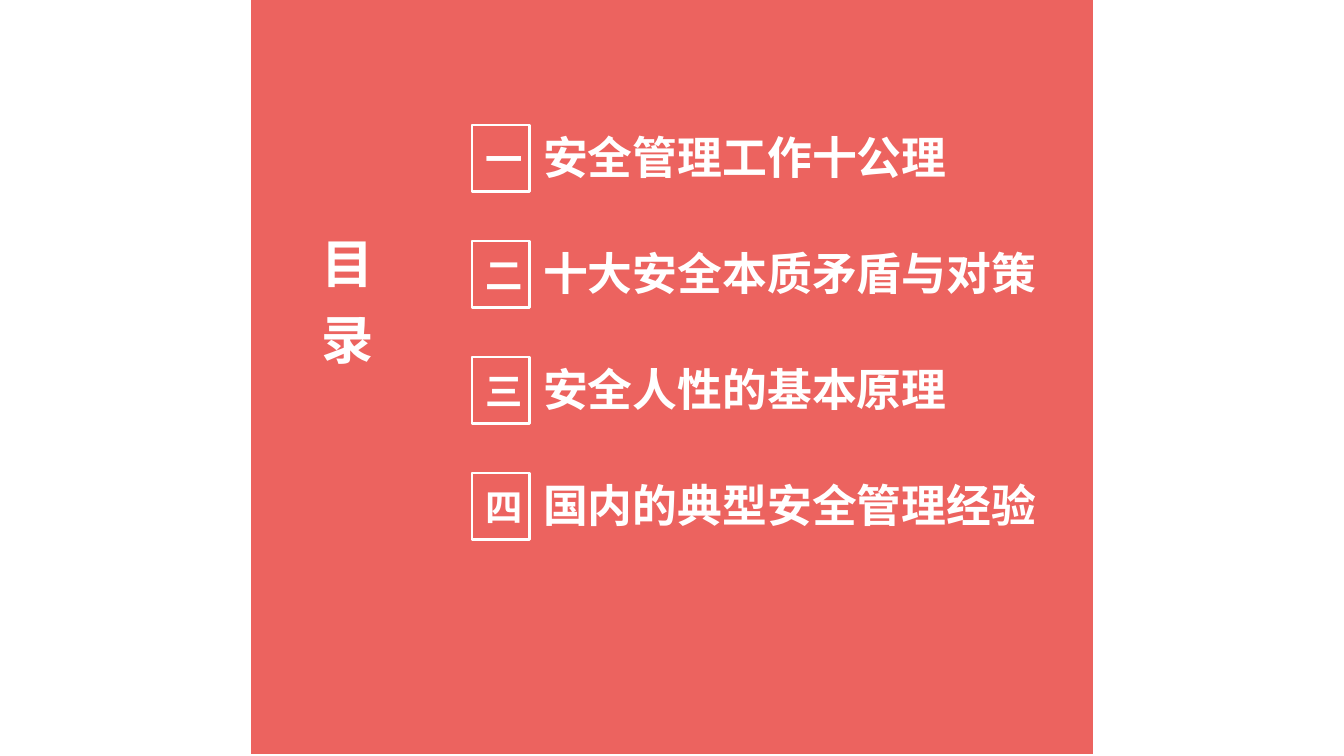
"""Build the contents slide: a vertical title and four numbered chapters."""
from lxml.etree import SubElement
from pptx import Presentation
from pptx.dml.color import RGBColor
from pptx.enum.shapes import MSO_SHAPE
from pptx.enum.text import MSO_ANCHOR, MSO_AUTO_SIZE, PP_ALIGN
from pptx.oxml.ns import qn
from pptx.util import Pt

TITLE = "目录"
CHAPTERS = [
    ("一", "安全管理工作十公理"),
    ("二", "十大安全本质矛盾与对策"),
    ("三", "安全人性的基本原理"),
    ("四", "国内的典型安全管理经验"),
]
FONT = "Noto Sans CJK SC"
RED = RGBColor(0xE6, 0x2D, 0x28)
WHITE = RGBColor(0xFF, 0xFF, 0xFF)
SCALE = 914400 / 134.4
TOP, PITCH = 125, 116
BOX_X, BOX_W, BOX_H = 472, 58, 67
LABEL_W = 540


def px(*lengths):
    return [round(n * SCALE) for n in lengths]


def add_run(p, text, size):
    r = p.add_run()
    r.text = text
    style = {"name": FONT, "size": Pt(size), "bold": True}
    for key, value in style.items():
        setattr(r.font, key, value)
    r.font.color.rgb = WHITE
    SubElement(r.font._element, qn("a:ea"), typeface=FONT)
    return r


def add_rect(slide, *place):
    sp = slide.shapes.add_shape(MSO_SHAPE.RECTANGLE, *px(*place))
    sp.shadow.inherit = False
    return sp


def add_panel(slide):
    sp = add_rect(slide, 251, -1, 842, 755)
    sp.fill.solid()
    sp.fill.fore_color.rgb = RED
    color = sp.fill._xPr.find(qn("a:solidFill"))[0]
    SubElement(color, qn("a:alpha"), val="74000")
    sp.line.fill.background()
    slide.shapes._spTree.insert(2, sp._element)


def format_title(sp):
    sp.left, sp.top, sp.width, sp.height = px(300, 231, 83, 294)
    tf = sp.text_frame
    tf.auto_size = MSO_AUTO_SIZE.NONE
    tf.vertical_anchor = MSO_ANCHOR.MIDDLE
    tf._txBody.bodyPr.set("vert", "eaVert")
    p = tf.paragraphs[0]
    p.alignment = PP_ALIGN.CENTER
    p.line_spacing = 0.9
    first, last = TITLE
    add_run(p, first, 28).font._element.set("spc", "1280")
    add_run(p, last, 28)


def add_chapter(slide, y, number, name):
    label = slide.shapes.add_textbox(*px(BOX_X + BOX_W, y - 2, LABEL_W, BOX_H))
    label.text_frame.word_wrap = True
    add_run(label.text_frame.paragraphs[0], name, 24)
    box = add_rect(slide, BOX_X, y, BOX_W, BOX_H)
    box.fill.background()
    box.line.color.rgb = WHITE
    box.line.width = Pt(1.5)
    tf = box.text_frame
    tf.vertical_anchor = MSO_ANCHOR.MIDDLE
    p = tf.paragraphs[0]
    p.alignment = PP_ALIGN.CENTER
    add_run(p, number, 20)


def main():
    prs = Presentation()
    prs.slide_width, prs.slide_height = px(1344, 756)
    slide = prs.slides.add_slide(prs.slide_layouts[5])
    add_panel(slide)
    format_title(slide.shapes.title)
    for i, (number, name) in enumerate(CHAPTERS):
        add_chapter(slide, TOP + i * PITCH, number, name)
    prs.save("out.pptx")


if __name__ == "__main__":
    main()
